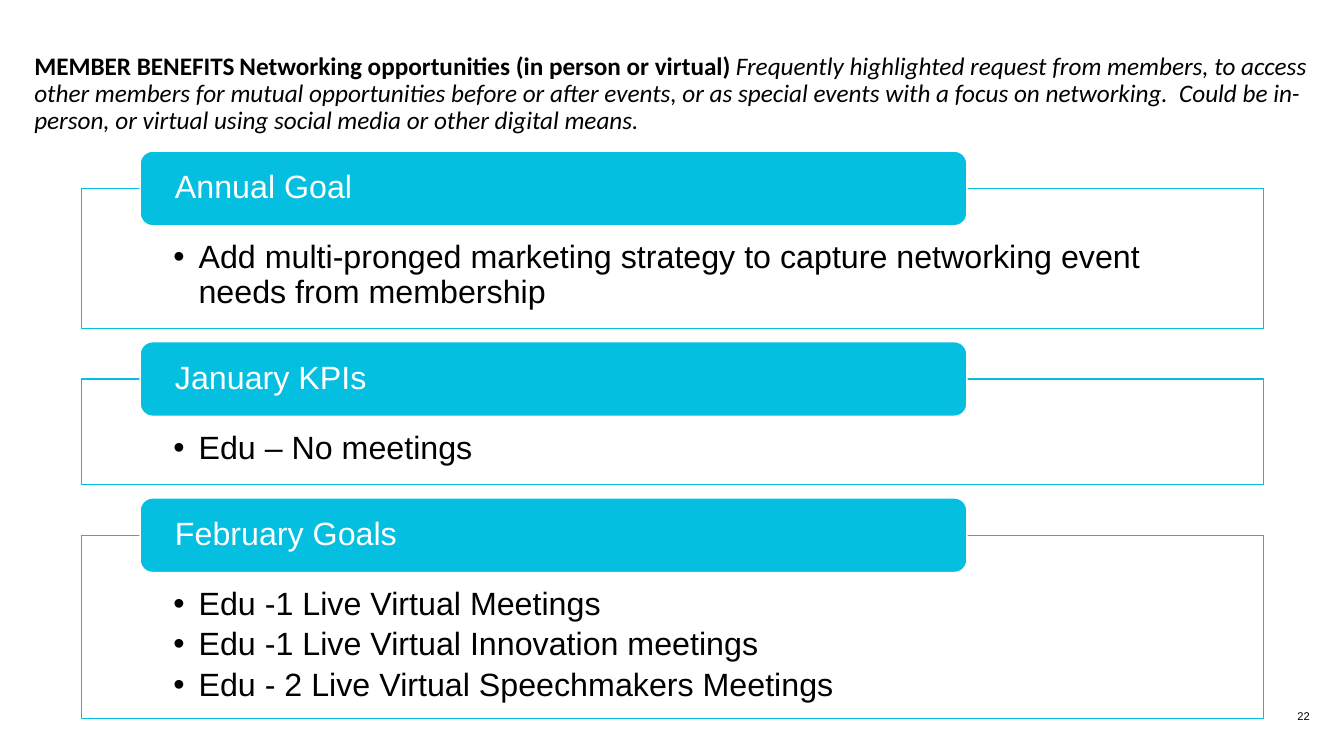
from pptx import Presentation
from pptx.util import Inches, Pt
from pptx.dml.color import RGBColor as RGB
from pptx.enum.shapes import MSO_SHAPE as Shape
from pptx.enum.text import MSO_ANCHOR as Anchor, PP_ALIGN as Align
from pptx.oxml.ns import qn
from lxml.etree import SubElement as Sub
from dataclasses import dataclass


@dataclass
class Theme:
    cyan: RGB = RGB(0x05, 0xBF, 0xE0)
    white: RGB = RGB(255, 255, 255)
    black: RGB = RGB(0, 0, 0)
    body: str = "Arial"
    head: str = "Calibri"
    text: int = 23
    title: int = 18
    gap: int = 12
    small: int = 8


theme = Theme()


def set_up(shape, anchor, *insets):
    """Set wrapping, anchor and insets; return the text frame."""
    frame = shape.text_frame
    frame.word_wrap = True
    frame.vertical_anchor = anchor
    left, top, right, bottom = [Inches(n) for n in insets]
    frame.margin_left, frame.margin_top = left, top
    frame.margin_right, frame.margin_bottom = right, bottom
    return frame


def add_run(para, text, size, color, font=theme.body, bold=False, slant=False):
    run = para.add_run()
    run.text = text
    run.font.size = Pt(size)
    run.font.name = font
    run.font.color.rgb = color
    run.font.bold = bold
    run.font.italic = slant


deck = Presentation()
deck.slide_width, deck.slide_height = Inches(13.33), Inches(7.5)
slide = deck.slides.add_slide(deck.slide_layouts[6])
shapes = slide.shapes

# Title: bold lead words, then the description in italics
box = shapes.add_textbox(Inches(0.34), Inches(0.36), Inches(12.64), Inches(1.15))
para = set_up(box, Anchor.MIDDLE, 0, 0, 0, 0).paragraphs[0]
para.line_spacing = 0.9
for text, bold, slant in [
    ("MEMBER BENEFITS", True, False),
    ("Networking opportunities (in person or virtual)", True, False),
    ("Frequently highlighted request from members, to access other members "
     "for mutual opportunities before or after events, or as special events "
     "with a focus on networking.  Could be in-person, or virtual using "
     "social media or other digital means.", False, True),
]:
    add_run(para, text, theme.title, theme.black, theme.head, bold, slant)
    add_run(para, " ", theme.gap, theme.black, slant=slant)

# Goal groups: frame height, heading, bullets
groups = [
    (1.39, "Annual Goal", [
        "Add multi-pronged marketing strategy to capture networking event "
        "needs from membership"]),
    (1.05, "January KPIs", ["Edu – No meetings"]),
    (1.82, "February Goals", [
        "Edu -1 Live Virtual Meetings",
        "Edu -1 Live Virtual Innovation meetings",
        "Edu - 2 Live Virtual Speechmakers Meetings"]),
]
top, drop, space = 1.5, 0.37, 0.13
for height, heading, points in groups:
    # Outlined frame with the bullets
    panel = shapes.add_shape(Shape.RECTANGLE, Inches(0.81), Inches(top + drop),
                             Inches(11.72), Inches(height))
    panel.shadow.inherit = False
    panel.fill.solid()
    panel.fill.fore_color.rgb = theme.white
    tint = panel.fill._xPr.find(qn("a:solidFill"))[0]
    Sub(tint, qn("a:alpha"), val="90000")
    panel.line.color.rgb = theme.cyan
    panel.line.width = Pt(1)
    frame = set_up(panel, Anchor.TOP, 0.91, 0.52, 0.91, 0.18)
    for i, point in enumerate(points):
        para = frame.add_paragraph() if i else frame.paragraphs[0]
        para.alignment = Align.LEFT
        para.line_spacing = 0.9
        para.space_after = Pt(4)
        props = para._p.get_or_add_pPr()
        props.set("marL", str(Inches(0.25)))
        props.set("indent", str(-Inches(0.25)))
        Sub(props, qn("a:buFont"), typeface=theme.body)
        Sub(props, qn("a:buChar"), char="•")
        add_run(para, point, theme.text, theme.black)

    # Heading tab across the frame's top edge
    tab = shapes.add_shape(Shape.ROUNDED_RECTANGLE, Inches(1.39), Inches(top),
                           Inches(8.2), Inches(2 * drop))
    tab.shadow.inherit = False
    tab.fill.solid()
    tab.fill.fore_color.rgb = theme.cyan
    tab.line.color.rgb = theme.white
    tab.line.width = Pt(1)
    para = set_up(tab, Anchor.MIDDLE, 0.31, 0, 0.31, 0).paragraphs[0]
    para.alignment = Align.LEFT
    para.line_spacing = 0.9
    add_run(para, heading, theme.text, theme.white)
    top += drop + height + space

# Page number
box = shapes.add_textbox(Inches(12.54), Inches(6.95), Inches(0.45), Inches(0.22))
para = set_up(box, Anchor.BOTTOM, 0, 0, 0, 0).paragraphs[0]
para.alignment = Align.RIGHT
add_run(para, "22", theme.small, theme.black)

deck.save("out.pptx")
